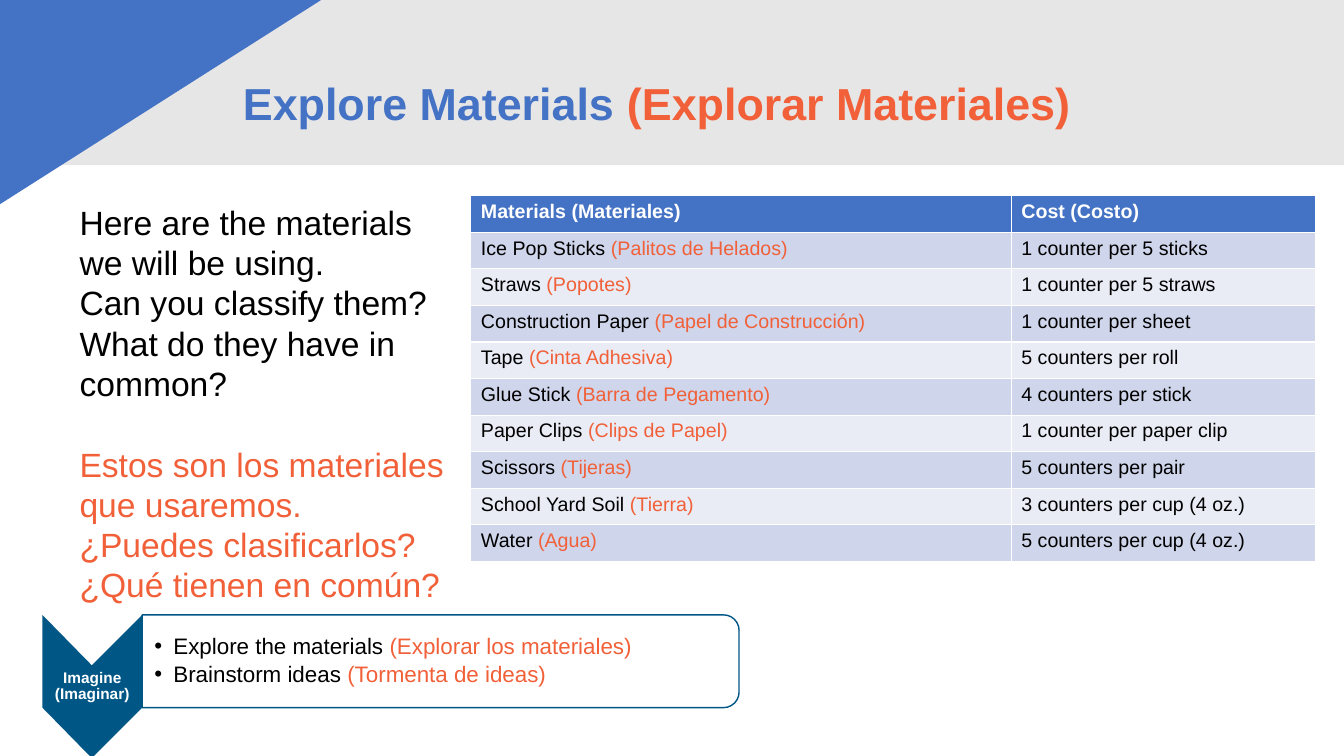
from dataclasses import dataclass

from lxml.etree import SubElement
from pptx import Presentation
from pptx.dml.color import RGBColor
from pptx.enum.shapes import MSO_SHAPE
from pptx.enum.text import MSO_ANCHOR, MSO_AUTO_SIZE, PP_ALIGN
from pptx.oxml.ns import qn
from pptx.util import Inches, Pt

BLUE = RGBColor(0x44, 0x72, 0xC4)
ORANGE = RGBColor(0xF1, 0x60, 0x38)
TEAL = RGBColor(0x00, 0x57, 0x86)
GRAY = RGBColor(0xE7, 0xE6, 0xE6)
DARK_BAND = RGBColor(0xCF, 0xD5, 0xEA)
LIGHT_BAND = RGBColor(0xE9, 0xEB, 0xF5)
BLACK = RGBColor(0x00, 0x00, 0x00)
WHITE = RGBColor(0xFF, 0xFF, 0xFF)


@dataclass(frozen=True)
class Run:
    text: str
    color: RGBColor


@dataclass(frozen=True)
class Box:
    left: float
    top: float
    width: float
    height: float

    def lengths(self) -> tuple:
        return tuple(Inches(value) for value in (self.left, self.top, self.width, self.height))


@dataclass(frozen=True)
class Material:
    english: str
    spanish: str
    cost: str


MATERIALS = [
    Material("Ice Pop Sticks", "(Palitos de Helados)", "1 counter per 5 sticks"),
    Material("Straws", "(Popotes)", "1 counter per 5 straws"),
    Material("Construction Paper", "(Papel de Construcción)", "1 counter per sheet"),
    Material("Tape", "(Cinta Adhesiva)", "5 counters per roll"),
    Material("Glue Stick", "(Barra de Pegamento)", "4 counters per stick"),
    Material("Paper Clips", "(Clips de Papel)", "1 counter per paper clip"),
    Material("Scissors", "(Tijeras)", "5 counters per pair"),
    Material("School Yard Soil", "(Tierra)", "3 counters per cup (4 oz.)"),
    Material("Water", "(Agua)", "5 counters per cup (4 oz.)"),
]
QUESTIONS = [
    Run("Here are the materials we will be using.", BLACK),
    Run("Can you classify them?", BLACK),
    Run("What do they have in common?", BLACK),
    Run("Estos son los materiales que usaremos.", ORANGE),
    Run("¿Puedes clasificarlos?", ORANGE),
    Run("¿Qué tienen en común?", ORANGE),
]
SPANISH_START = 3
STEPS = [
    ("Explore the materials", "(Explorar los materiales)"),
    ("Brainstorm ideas", "(Tormenta de ideas)"),
]

TITLE_BOX = Box(2.31, 0.33, 9.7, 1.45)
BAND_BOX = Box(-0.26, -0.19, 13.59, 1.83)
CORNER_BOX = Box(-2.57, -1.72, 8.46, 5.38)
QUESTION_BOX = Box(0.69, 1.95, 4.01, 4.44)
TABLE_BOX = Box(4.67, 1.94, 8.38, 3.63)
STEP_BOX = Box(1.41, 6.1, 5.92, 0.92)
CHEVRON_POINTS = [(1.41, 6.1), (1.41, 7.02), (0.91, 7.52), (0.42, 7.02), (0.42, 6.1), (0.91, 6.6)]

TITLE_FONT = {"name": "Arial", "size": Pt(32), "bold": True}
QUESTION_FONT = {"name": "Arial", "size": Pt(24)}
HEADER_FONT = {"name": "Arial", "size": Pt(14), "bold": True}
CELL_FONT = {"name": "Arial", "size": Pt(14), "bold": False}
STEP_FONT = {"name": "Arial", "size": Pt(16)}
CHEVRON_FONT = {"name": "Arial", "size": Pt(11), "bold": True}


def apply_format(target, values: dict) -> None:
    for name, value in values.items():
        setattr(target, name, value)


def place(shape, box: Box) -> None:
    apply_format(shape, dict(zip(("left", "top", "width", "height"), box.lengths())))


def write_runs(paragraph, runs: list[Run], font_format: dict) -> None:
    for item in runs:
        run = paragraph.add_run()
        run.text = item.text
        apply_format(run.font, font_format)
        run.font.color.rgb = item.color


def bilingual(english: str, spanish: str, color: RGBColor = BLACK) -> list[Run]:
    return [Run(f"{english} ", color), Run(spanish, ORANGE)]


def paint(shape, fill: RGBColor) -> None:
    shape.shadow.inherit = False
    shape.fill.solid()
    shape.fill.fore_color.rgb = fill
    shape.line.fill.background()


def add_background(slide) -> None:
    band = slide.shapes.add_shape(MSO_SHAPE.RECTANGLE, *BAND_BOX.lengths())
    paint(band, GRAY)
    corner = slide.shapes.add_shape(MSO_SHAPE.RIGHT_TRIANGLE, *CORNER_BOX.lengths())
    paint(corner, BLUE)
    corner.rotation = 180
    corner._element.spPr.xfrm.set("flipH", "1")


def add_chevron(slide) -> None:
    points = [(Inches(x), Inches(y)) for x, y in CHEVRON_POINTS]
    builder = slide.shapes.build_freeform(*points[0])
    builder.add_line_segments(points[1:], close=True)
    chevron = builder.convert_to_shape()
    paint(chevron, TEAL)
    apply_format(chevron.text_frame, {
        "word_wrap": True, "vertical_anchor": MSO_ANCHOR.MIDDLE,
        "margin_left": Inches(0.01), "margin_right": Inches(0.01),
        "margin_top": Inches(0.47), "margin_bottom": Inches(0.47),
    })
    paragraph = chevron.text_frame.paragraphs[0]
    apply_format(paragraph, {"alignment": PP_ALIGN.CENTER, "line_spacing": 0.9})
    write_runs(paragraph, [Run("Imagine (Imaginar)", WHITE)], CHEVRON_FONT)


def add_step_frame(slide) -> None:
    offset = (STEP_BOX.width - STEP_BOX.height) / 2
    upright = Box(STEP_BOX.left + offset, STEP_BOX.top - offset, STEP_BOX.height, STEP_BOX.width)
    frame = slide.shapes.add_shape(MSO_SHAPE.ROUND_2_SAME_RECTANGLE, *upright.lengths())
    paint(frame, WHITE)
    frame.rotation = 90
    color = frame._element.spPr.find(qn("a:solidFill"))[0]
    SubElement(color, qn("a:alpha"), val="90000")
    frame.line.color.rgb = TEAL
    frame.line.width = Pt(1)


def fill_steps(body) -> None:
    place(body, STEP_BOX)
    text_frame = body.text_frame
    apply_format(text_frame, {
        "word_wrap": True, "auto_size": MSO_AUTO_SIZE.NONE, "vertical_anchor": MSO_ANCHOR.MIDDLE,
        "margin_left": Inches(0.12), "margin_right": Inches(0.05),
        "margin_top": Inches(0.05), "margin_bottom": Inches(0.05),
    })
    for index, (english, spanish) in enumerate(STEPS):
        paragraph = text_frame.add_paragraph() if index else text_frame.paragraphs[0]
        apply_format(paragraph, {"line_spacing": 0.9, "space_before": Pt(0), "space_after": Pt(3)})
        properties = paragraph._p.get_or_add_pPr()
        properties.set("marL", str(Inches(0.19)))
        properties.set("indent", str(-Inches(0.19)))
        SubElement(properties, qn("a:buChar"), char="•")
        write_runs(paragraph, bilingual(english, spanish), STEP_FONT)


def fill_title(title) -> None:
    place(title, TITLE_BOX)
    apply_format(title.text_frame, {
        "word_wrap": True, "auto_size": MSO_AUTO_SIZE.NONE, "vertical_anchor": MSO_ANCHOR.MIDDLE,
    })
    paragraph = title.text_frame.paragraphs[0]
    apply_format(paragraph, {"alignment": PP_ALIGN.LEFT, "line_spacing": 0.9})
    write_runs(paragraph, bilingual("Explore Materials", "(Explorar Materiales)", BLUE), TITLE_FONT)


def add_questions(slide) -> None:
    text_frame = slide.shapes.add_textbox(*QUESTION_BOX.lengths()).text_frame
    text_frame.word_wrap = True
    for index, question in enumerate(QUESTIONS):
        paragraph = text_frame.add_paragraph() if index else text_frame.paragraphs[0]
        if index == SPANISH_START:
            paragraph.space_before = Pt(28.8)
        write_runs(paragraph, [question], QUESTION_FONT)


def fill_cell(cell, runs: list[Run], font_format: dict, fill: RGBColor) -> None:
    cell.fill.solid()
    cell.fill.fore_color.rgb = fill
    write_runs(cell.text_frame.paragraphs[0], runs, font_format)


def add_materials_table(slide) -> None:
    table = slide.shapes.add_table(len(MATERIALS) + 1, 2, *TABLE_BOX.lengths()).table
    for column, width in zip(table.columns, (5.36, 3.02)):
        column.width = Inches(width)
    for column, heading in enumerate(("Materials (Materiales)", "Cost (Costo)")):
        fill_cell(table.cell(0, column), [Run(heading, WHITE)], HEADER_FONT, BLUE)
    for row, material in enumerate(MATERIALS, start=1):
        band = DARK_BAND if row % 2 else LIGHT_BAND
        fill_cell(table.cell(row, 0), bilingual(material.english, material.spanish), CELL_FONT, band)
        fill_cell(table.cell(row, 1), [Run(material.cost, BLACK)], CELL_FONT, band)


def main() -> None:
    presentation = Presentation()
    apply_format(presentation, {"slide_width": Inches(13.33), "slide_height": Inches(7.5)})
    slide = presentation.slides.add_slide(presentation.slide_layouts[1])
    title, body = slide.placeholders
    add_background(slide)
    add_chevron(slide)
    add_step_frame(slide)
    for placeholder in (body, title):
        slide.shapes._spTree.append(placeholder._element)
    fill_steps(body)
    fill_title(title)
    add_questions(slide)
    add_materials_table(slide)
    presentation.save("out.pptx")


if __name__ == "__main__":
    main()
